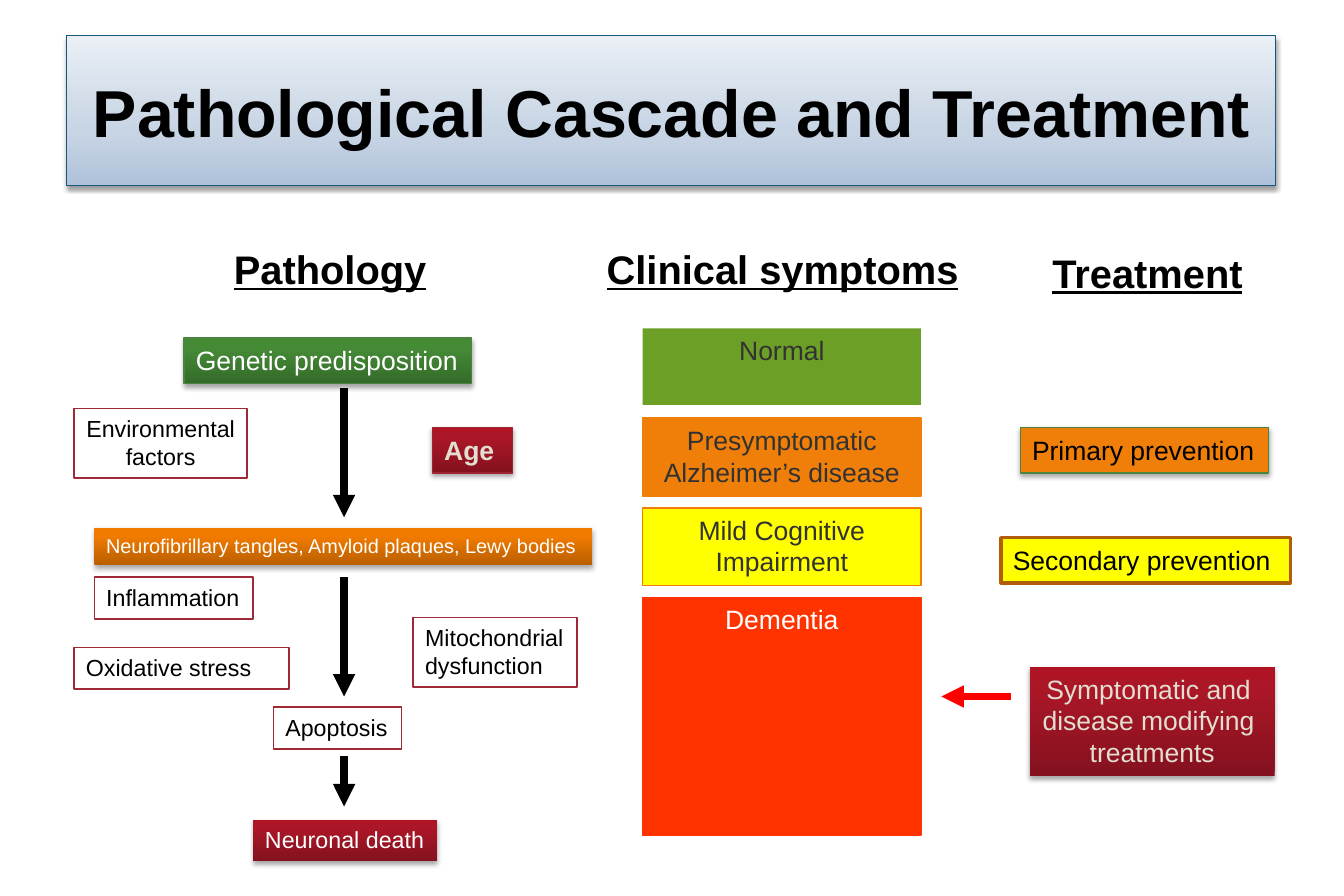
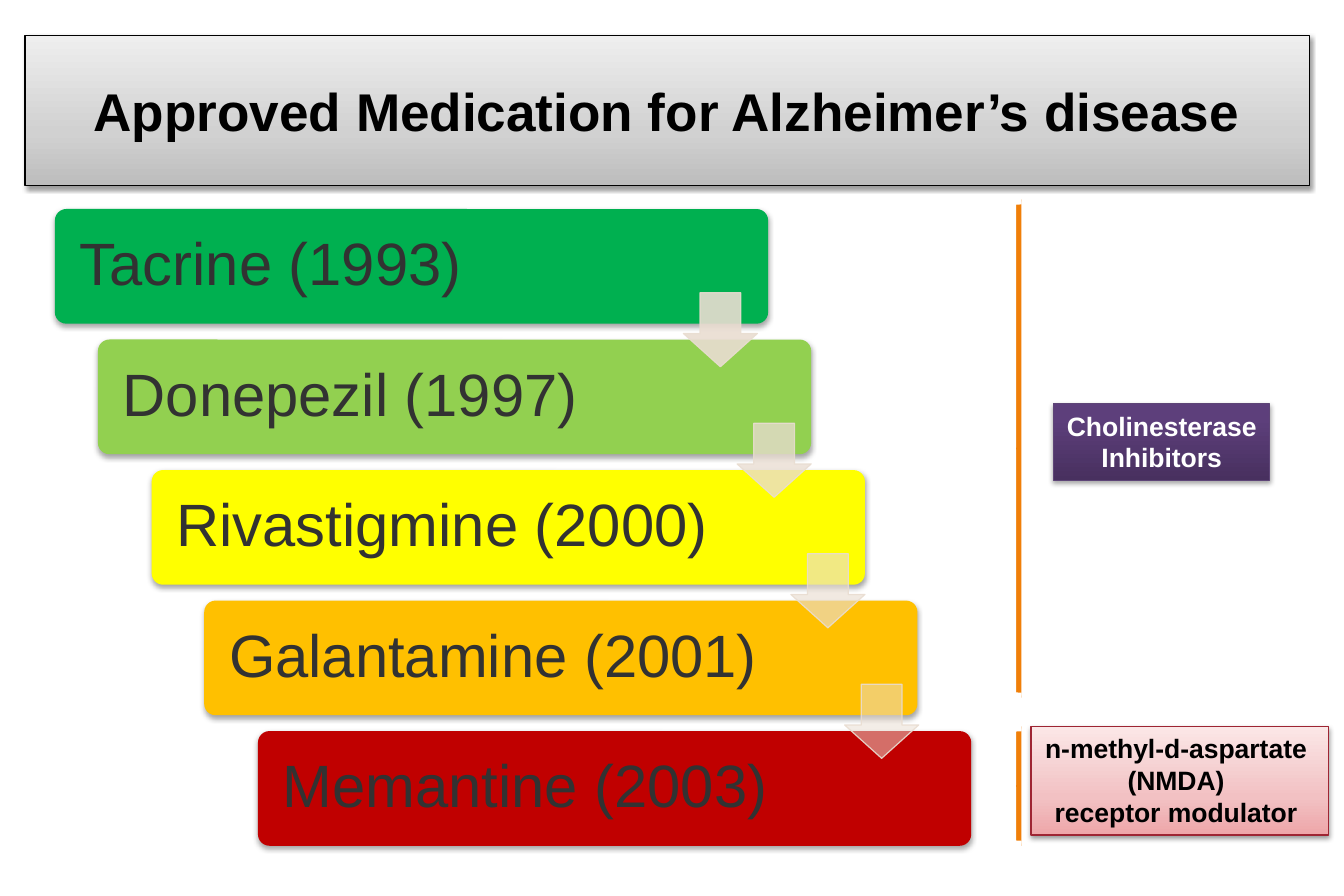
from dataclasses import dataclass
from typing import NamedTuple

from lxml import etree
from pptx import Presentation
from pptx.dml.color import RGBColor
from pptx.enum.shapes import MSO_CONNECTOR, MSO_SHAPE
from pptx.enum.text import MSO_ANCHOR, PP_ALIGN
from pptx.oxml.ns import qn
from pptx.util import Inches, Pt

RECTANGLE = MSO_SHAPE.RECTANGLE
ROUNDED = MSO_SHAPE.ROUNDED_RECTANGLE
DOWN_ARROW = MSO_SHAPE.DOWN_ARROW
LEFT_BRACE = MSO_SHAPE.LEFT_BRACE
STRAIGHT = MSO_CONNECTOR.STRAIGHT
TOP, MIDDLE = MSO_ANCHOR.TOP, MSO_ANCHOR.MIDDLE
LEFT, CENTER = PP_ALIGN.LEFT, PP_ALIGN.CENTER

FONT = "Arial"
BLACK, WHITE, DARK, CREAM = "000000", "FFFFFF", "323232", "E3DED1"
ORANGE, YELLOW, RED, BEIGE = "F07F09", "FFFF00", "FF3300", "E9DDD1"


class Shadow(NamedTuple):
    distance: float
    opacity: int


class Gradient(NamedTuple):
    """Three colours from bottom to top, the middle one at a percentage."""
    bottom: str
    middle: str
    top: str
    middle_at: int


SOFT = Shadow(1.6, 38)
STRONG = Shadow(1.8, 35)
CRIMSON = Gradient("84111E", "AB1727", "AF1425", 80)


@dataclass(frozen=True)
class Style:
    fill: str | Gradient | None = None
    line: str | None = None
    weight: float = 1
    shadow: Shadow | None = None


PLAIN = Style()
OUTLINED = Style(line="9F2936")
CRIMSON_BOX = Style(CRIMSON, shadow=STRONG)
BLUE_TITLE = Style(Gradient("AFC2DA", "C7D4E4", "EAEFF5", 35), "18577C", 0.75, SOFT)
GREY_TITLE = Style(Gradient("BDBDBD", "D1D1D1", "EEEEEE", 35), BLACK, 0.75, SOFT)
PINK_BOX = Style(Gradient("EEA6A9", "F2C1C3", "FBE7E7", 35), "9E2533", 0.75, SOFT)
PURPLE_BOX = Style(Gradient("48305F", "5D3F7B", "5D3E7D", 80), "5E4577", 0.75, STRONG)
GREEN_BOX = Style(Gradient("356B2A", "458B36", "458D35", 80), "4B843F", 0.75, STRONG)
ORANGE_BOX = Style(Gradient("BA5F00", "F17B00", "F27C00", 80), shadow=STRONG)
BRACE = Style(ORANGE, WHITE, 6)


@dataclass(frozen=True)
class Box:
    left: float
    top: float
    width: float
    height: float
    lines: tuple[str, ...] = ()
    style: Style = PLAIN
    size: int = 16
    color: str = BLACK
    bold: bool = False
    underline: bool = False
    align: PP_ALIGN = LEFT
    anchor: MSO_ANCHOR = TOP
    wrap: bool = True
    inset: float = 0.1
    spacing: float = 1.0


class Arrow(NamedTuple):
    start: tuple[float, float]
    end: tuple[float, float]
    color: str = BLACK


class Drug(NamedTuple):
    name: str
    left: float
    color: str


def rgb(color: str) -> RGBColor:
    return RGBColor.from_string(color)


def add_color(parent, color: str):
    return etree.SubElement(parent, qn("a:srgbClr"), val=color)


def set_opacity(fill, percent: float) -> None:
    """Make every solid colour below an element partly transparent."""
    for color in fill.iter(qn("a:srgbClr")):
        etree.SubElement(color, qn("a:alpha"), val=str(round(percent * 1000)))


def set_fill(shape, fill: str | Gradient | None) -> None:
    if fill is None:
        shape.fill.background()
    elif isinstance(fill, str):
        shape.fill.solid()
        shape.fill.fore_color.rgb = rgb(fill)
    else:
        shape.fill.gradient()
        shape.fill.gradient_angle = 90
        stops = next(shape._element.spPr.iter(qn("a:gsLst")))
        for stop in list(stops):
            stops.remove(stop)
        for position, color in ((0, fill.bottom), (fill.middle_at, fill.middle), (100, fill.top)):
            add_color(etree.SubElement(stops, qn("a:gs"), pos=str(position * 1000)), color)


def apply_style(shape, style: Style) -> None:
    set_fill(shape, style.fill)
    if style.line:
        shape.line.color.rgb = rgb(style.line)
        shape.line.width = Pt(style.weight)
    else:
        shape.line.fill.background()
    shape.shadow.inherit = False
    if style.shadow:
        effects = shape._element.spPr.find(qn("a:effectLst"))
        outer = etree.SubElement(
            effects, qn("a:outerShdw"), blurRad=str(Pt(3.1)),
            dist=str(Pt(style.shadow.distance)), dir="5400000", rotWithShape="0")
        add_color(outer, BLACK)
        set_opacity(outer, style.shadow.opacity)


def write_text(shape, box: Box) -> None:
    frame = shape.text_frame
    frame.word_wrap = box.wrap
    frame.vertical_anchor = box.anchor
    frame.margin_left = Inches(box.inset)
    for index, line in enumerate(box.lines):
        para = frame.add_paragraph() if index else frame.paragraphs[0]
        para.alignment = box.align
        para.line_spacing = box.spacing
        span = para.add_run()
        span.text = line
        font = span.font
        font.name, font.size, font.bold = FONT, Pt(box.size), box.bold
        font.underline = box.underline
        font.color.rgb = rgb(box.color)


def add_box(page, box: Box, preset: MSO_SHAPE = RECTANGLE):
    place = [Inches(value) for value in (box.left, box.top, box.width, box.height)]
    if box.style == PLAIN:
        shape = page.shapes.add_textbox(*place)
    else:
        shape = page.shapes.add_shape(preset, *place)
        apply_style(shape, box.style)
    if box.lines:
        write_text(shape, box)
    return shape


def add_arrow(page, arrow: Arrow) -> None:
    points = [Inches(value) for value in (*arrow.start, *arrow.end)]
    connector = page.shapes.add_connector(STRAIGHT, *points)
    connector.line.color.rgb = rgb(arrow.color)
    connector.line.width = Pt(4.5)
    etree.SubElement(connector.line._get_or_add_ln(), qn("a:tailEnd"), type="triangle")
    etree.SubElement(connector._element.spPr, qn("a:effectLst"))


def add_page(deck, title: str, left: float, width: float, size: int, style: Style):
    page = deck.slides.add_slide(deck.slide_layouts[6])
    add_box(page, Box(left, 0.3, width, 1.25, (title,), style, size,
                      bold=True, align=CENTER, anchor=MIDDLE))
    return page


def heading(left: float, top: float, width: float, text: str) -> Box:
    return Box(left, top, width, 0.5, (text,), size=24, bold=True, underline=True, wrap=False)


def factor(left: float, top: float, width: float, height: float, *lines: str,
           align: PP_ALIGN = LEFT, wrap: bool = True) -> Box:
    return Box(left, top, width, height, lines, OUTLINED, 14, align=align, wrap=wrap)


def stage(top: float, height: float, style: Style, *lines: str, color: str = DARK) -> Box:
    return Box(5.38, top, 2.33, height, lines, style, color=color, align=CENTER)


CASCADE_BOXES = (
    heading(1.86, 2, 1.81, "Pathology"),
    heading(4.98, 2, 3.15, "Clinical symptoms"),
    heading(8.71, 2.03, 1.81, "Treatment"),
    Box(1.54, 2.83, 2.41, 0.38, ("Genetic predisposition",), GREEN_BOX, color=WHITE, wrap=False),
    factor(0.62, 3.42, 1.45, 0.58, "Environmental", "factors", align=CENTER, wrap=False),
    Box(3.62, 3.58, 0.67, 0.38, ("Age",), Style(CRIMSON, "9E2533", 0.75, STRONG),
        color=CREAM, bold=True),
    Box(0.79, 4.42, 4.17, 0.31, ("Neurofibrillary tangles, Amyloid plaques, Lewy bodies",),
        ORANGE_BOX, 12, WHITE),
    factor(0.79, 4.83, 1.33, 0.35, "Inflammation"),
    factor(0.62, 5.42, 1.8, 0.35, "Oxidative stress"),
    factor(3.46, 5.17, 1.37, 0.58, "Mitochondrial", "dysfunction", wrap=False),
    factor(2.29, 5.92, 1.07, 0.35, "Apoptosis", wrap=False),
    Box(2.12, 6.86, 1.54, 0.35, ("Neuronal death",), CRIMSON_BOX, 14, WHITE, wrap=False),
    stage(2.75, 0.64, Style("6B9F25"), "Normal"),
    stage(3.5, 0.65, Style(ORANGE, ORANGE), "Presymptomatic", "Alzheimer’s disease"),
    stage(4.25, 0.65, Style(YELLOW, ORANGE), "Mild Cognitive", "Impairment"),
    stage(5, 1.99, Style(RED, RED), "Dementia", color=WHITE),
    Box(8.54, 3.58, 2.08, 0.38, ("Primary prevention",),
        Style(ORANGE, "4B843F", 0.75, STRONG), wrap=False),
    Box(8.38, 4.5, 2.42, 0.38, ("Secondary prevention",), Style(YELLOW, "B25E07", 2)),
    Box(8.62, 5.58, 2.05, 0.92, ("Symptomatic and ", "disease modifying ", "treatments"),
        CRIMSON_BOX, color=CREAM, align=CENTER, wrap=False),
)

CASCADE_ARROWS = (
    Arrow((2.88, 3.25), (2.88, 4.33)),
    Arrow((2.88, 4.83), (2.88, 5.83)),
    Arrow((2.88, 6.33), (2.88, 6.75)),
    Arrow((8.46, 5.83), (7.88, 5.83), "FF0000"),
)

DRUGS = (
    Drug("Tacrine (1993)", 0.46, "00B050"),
    Drug("Donepezil (1997)", 0.82, "92D050"),
    Drug("Rivastigmine (2000)", 1.27, YELLOW),
    Drug("Galantamine (2001)", 1.71, "FFC000"),
    Drug("Memantine (2003)", 2.16, "C00000"),
)

DRUG_CLASSES = (
    Box(8.82, 3.38, 1.81, 0.64, ("Cholinesterase", "Inhibitors"), PURPLE_BOX,
        color=WHITE, bold=True, align=CENTER, wrap=False),
    Box(8.63, 6.08, 2.49, 0.91, ("n-methyl-d-aspartate ", "(NMDA) ", "receptor modulator "),
        PINK_BOX, bold=True, align=CENTER, wrap=False),
)

BRACES = (Box(8.38, 1.67, 0.17, 4.17, style=BRACE), Box(8.38, 6.08, 0.17, 1, style=BRACE))


def build_cascade(deck) -> None:
    page = add_page(deck, "Pathological Cascade and Treatment", 0.56, 10.12, 40, BLUE_TITLE)
    for box in CASCADE_BOXES:
        add_box(page, box)
    for arrow in CASCADE_ARROWS:
        add_arrow(page, arrow)


def build_medication(deck) -> None:
    page = add_page(deck, "Approved Medication for Alzheimer’s disease",
                    0.21, 10.75, 32, GREY_TITLE)
    step = (6.12 - 1.75) / (len(DRUGS) - 1)
    for index, drug in enumerate(DRUGS):
        bar = add_box(page, Box(drug.left, 1.75 + index * step, 5.97, 0.96, (drug.name,),
                                Style(drug.color, shadow=STRONG), 36, DARK,
                                anchor=MIDDLE, inset=0.18, spacing=0.9), ROUNDED)
        bar.adjustments[0] = 0.1
    for index in range(len(DRUGS) - 1):
        arrow = add_box(page, Box(5.72 + index * 0.45, 2.45 + index * step, 0.62, 0.62,
                                  style=Style(BEIGE, BEIGE, 0.75)), DOWN_ARROW)
        arrow.adjustments[0], arrow.adjustments[1] = 0.55, 0.45
        set_opacity(arrow._element.spPr.find(qn("a:solidFill")), 90 - index * 40 / 3)
        set_opacity(arrow.line._get_or_add_ln(), 90)
    for box in DRUG_CLASSES:
        add_box(page, box)
    for brace in BRACES:
        add_box(page, brace, LEFT_BRACE)


def main() -> None:
    deck = Presentation()
    deck.slide_width, deck.slide_height = Inches(11.25), Inches(7.5)
    build_cascade(deck)
    build_medication(deck)
    deck.save("out.pptx")


if __name__ == "__main__":
    main()
